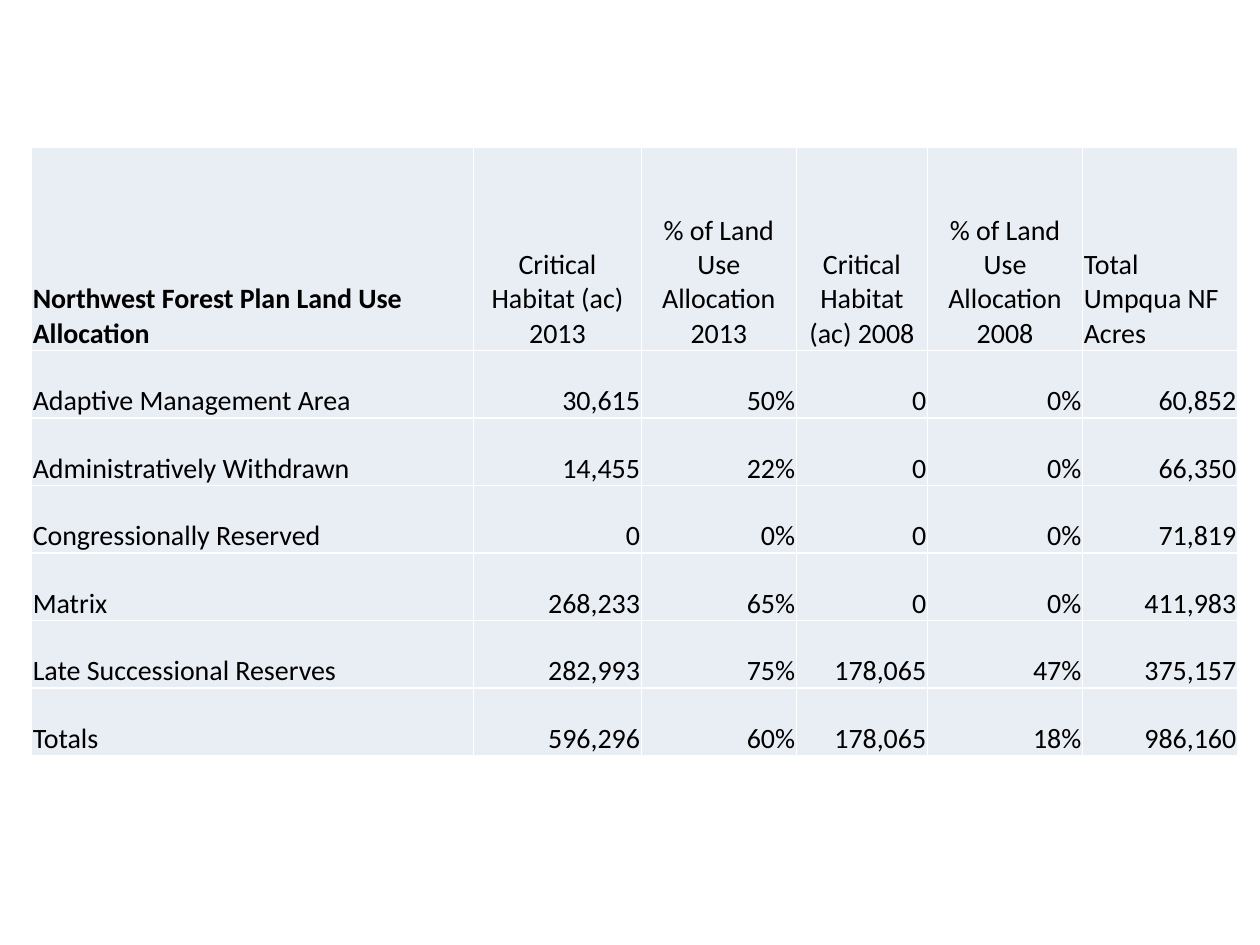
"""Build a slide with a table of critical habitat by land use allocation."""
from lxml.etree import SubElement as Sub
from pptx import Presentation
from pptx.dml.color import RGBColor
from pptx.enum.text import MSO_ANCHOR as Anchor, PP_ALIGN as Align
from pptx.oxml.ns import qn
from pptx.util import Pt

BLACK = RGBColor(0x00, 0x00, 0x00)
WHITE = RGBColor(0xFF, 0xFF, 0xFF)
PALE = RGBColor(0xE9, 0xED, 0xF4)

WIDTHS = [252.7, 95.8, 88.6, 75, 88.6, 88.6]
HEAD_H, ROW_H = 116, 38.6
LEFT, TOP = 18, 84.4

HEADS = [
    "Northwest Forest Plan Land Use Allocation",
    "Critical Habitat (ac) 2013",
    "% of Land Use Allocation 2013",
    "Critical Habitat (ac) 2008",
    "% of Land Use Allocation 2008",
    "Total Umpqua NF Acres",
]
ROWS = [
    ["Adaptive Management Area", "30,615", "50%", "0", "0%", "60,852"],
    ["Administratively Withdrawn", "14,455", "22%", "0", "0%", "66,350"],
    ["Congressionally Reserved", "0", "0%", "0", "0%", "71,819"],
    ["Matrix", "268,233", "65%", "0", "0%", "411,983"],
    ["Late Successional Reserves", "282,993", "75%", "178,065", "47%", "375,157"],
    ["Totals", "596,296", "60%", "178,065", "18%", "986,160"],
]
HEAD_AL = [Align.LEFT] + [Align.CENTER] * 4 + [Align.LEFT]
BODY_AL = [Align.LEFT] + [Align.RIGHT] * 5


def write(frame, text, size=16, bold=False, color=BLACK, align=Align.LEFT):
    """Put formatted text into a text frame."""
    para = frame.paragraphs[0]
    para.alignment = align
    run = para.add_run()
    run.text = text
    font = run.font
    font.name, font.size, font.bold = "Calibri", Pt(size), bold
    font.color.rgb = color


def edge(cell, color=WHITE, width=1):
    """Draw a solid line on all four sides of a cell."""
    props = cell._tc.get_or_add_tcPr()
    for side in ("a:lnL", "a:lnR", "a:lnT", "a:lnB"):
        line = Sub(props, qn(side), w=str(Pt(width)))
        fill = Sub(line, qn("a:solidFill"))
        Sub(fill, qn("a:srgbClr"), val=str(color))


def style(cell):
    """Set the edges, fill, insets and anchor of a cell."""
    edge(cell)
    cell.fill.solid()
    cell.fill.fore_color.rgb = PALE
    cell.margin_left = cell.margin_right = cell.margin_top = Pt(0.75)
    cell.margin_bottom = Pt(0)
    cell.vertical_anchor = Anchor.BOTTOM


def add_grid(slide):
    """Add the habitat table to the slide."""
    data = [HEADS] + ROWS
    highs = [HEAD_H] + [ROW_H] * len(ROWS)
    table = slide.shapes.add_table(
        len(data), len(WIDTHS), Pt(LEFT), Pt(TOP), Pt(sum(WIDTHS)), Pt(sum(highs))
    ).table
    for col, width in zip(table.columns, WIDTHS):
        col.width = Pt(width)
    for r, (texts, high) in enumerate(zip(data, highs)):
        table.rows[r].height = Pt(high)
        aligns = BODY_AL if r else HEAD_AL
        for c, (text, align) in enumerate(zip(texts, aligns)):
            cell = table.cell(r, c)
            style(cell)
            write(cell.text_frame, text, bold=r == c == 0, align=align)


def main():
    """Create and save the deck."""
    deck = Presentation()
    deck.slide_width, deck.slide_height = Pt(720), Pt(540)
    slide = deck.slides.add_slide(deck.slide_layouts[6])
    add_grid(slide)
    deck.save("out.pptx")


if __name__ == "__main__":
    main()
